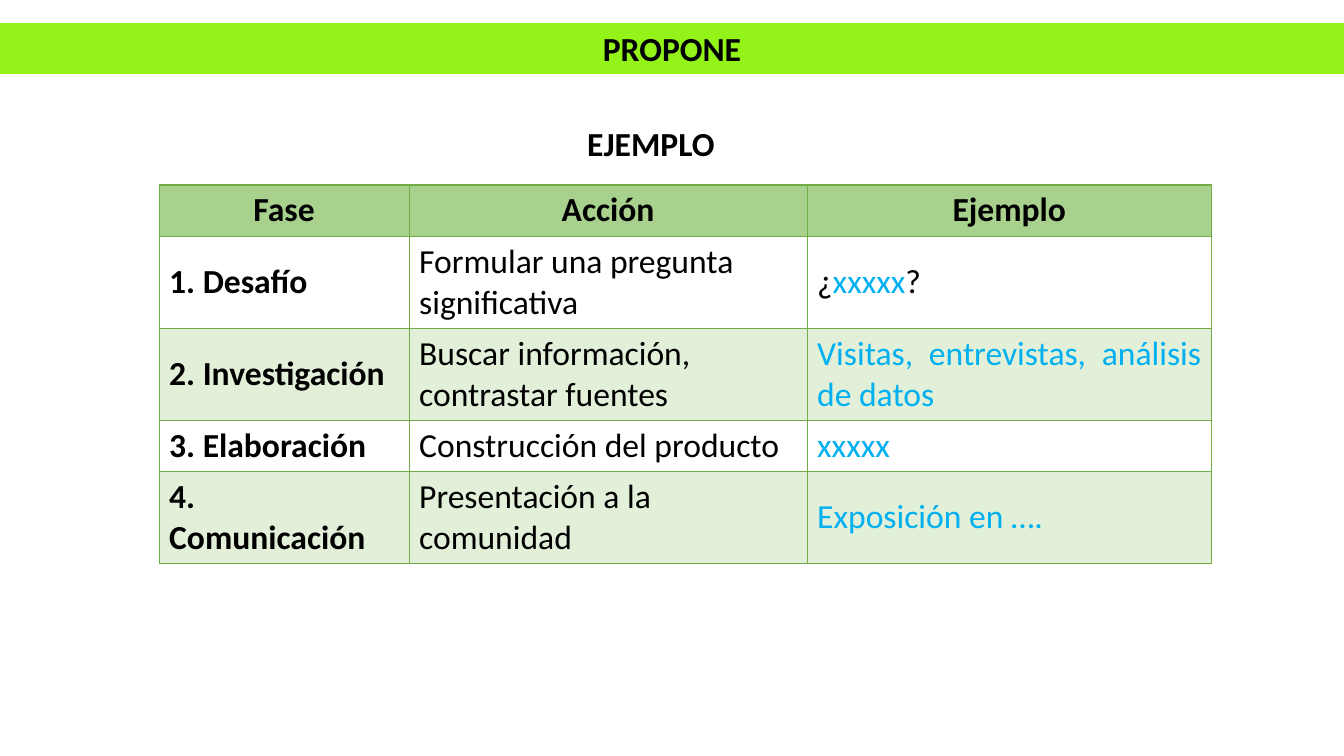
from lxml import etree
from pptx import Presentation
from pptx.dml.color import RGBColor
from pptx.enum import text
from pptx.oxml import ns
from pptx.util import Cm, Pt

# Content
TITLE = "PROPONE"
SUBTITLE = "EJEMPLO"
HEADERS = ("Fase", "Acción", "Ejemplo")
# Each example is a tuple of (wording, colour) pieces
PHASES = [
    ("1. Desafío", "Formular una pregunta significativa",
     (("¿", "black"), ("xxxxx", "blue"), ("?", "black"))),
    ("2. Investigación", "Buscar información, contrastar fuentes",
     (("Visitas, entrevistas, análisis de datos", "blue"),)),
    ("3. Elaboración", "Construcción del producto", (("xxxxx", "blue"),)),
    ("4. Comunicación", "Presentación a la comunidad",
     (("Exposición en ….", "blue"),)),
]
COLORS = {"black": "000000", "blue": "00B0F0", "lime": "94F319",
          "header": "A9D18E", "band": "E2F0D9", "border": "70AD47"}

# Layout
SLIDE_W, SLIDE_H = Cm(33.87), Cm(19.05)
COLUMN_WIDTHS = (Cm(6.3), Cm(10.03), Cm(10.19))
ONE_LINE, TWO_LINES = Cm(1.29), Cm(2.32)
ROW_HEIGHTS = (ONE_LINE, TWO_LINES, TWO_LINES, ONE_LINE, TWO_LINES)
ALIGN = text.PP_ALIGN


def rgb(name):
    return RGBColor.from_string(COLORS[name])


def write(paragraph, pieces, align, bold):
    paragraph.alignment = align
    for wording, color in pieces:
        run = paragraph.add_run()
        run.text = wording
        run.font.name = "Calibri"
        run.font.size = Pt(24)
        run.font.bold = bold
        run.font.color.rgb = rgb(color)


def add_borders(cell):
    properties = cell._tc.get_or_add_tcPr()
    for side in ("a:lnL", "a:lnR", "a:lnT", "a:lnB"):
        line = etree.SubElement(properties, ns.qn(side), w=str(Pt(1)))
        fill = etree.SubElement(line, ns.qn("a:solidFill"))
        etree.SubElement(fill, ns.qn("a:srgbClr"), val=COLORS["border"])


def fill_cell(cell, pieces, align, bold, color):
    add_borders(cell)
    if color:
        cell.fill.solid()
        cell.fill.fore_color.rgb = rgb(color)
    else:
        cell.fill.background()
    cell.vertical_anchor = text.MSO_ANCHOR.MIDDLE
    write(cell.text_frame.paragraphs[0], pieces, align, bold)


def main():
    prs = Presentation()
    prs.slide_width, prs.slide_height = SLIDE_W, SLIDE_H
    slide = prs.slides.add_slide(prs.slide_layouts[5])

    # Title band
    title = slide.shapes.title
    title.left, title.top, title.width, title.height = 0, Cm(0.58), SLIDE_W, Cm(1.28)
    title.fill.solid()
    title.fill.fore_color.rgb = rgb("lime")
    title.text_frame.auto_size = text.MSO_AUTO_SIZE.NONE
    title.text_frame.vertical_anchor = text.MSO_ANCHOR.MIDDLE
    write(title.text_frame.paragraphs[0], [(TITLE, "black")], ALIGN.CENTER, True)

    # Subtitle
    subtitle = slide.shapes.add_textbox(Cm(14.55), Cm(2.98), Cm(3.76), Cm(1.28))
    subtitle.text_frame.word_wrap = False
    write(subtitle.text_frame.paragraphs[0], [(SUBTITLE, "black")], ALIGN.LEFT, True)

    # Table of phases
    table = slide.shapes.add_table(
        len(ROW_HEIGHTS), len(COLUMN_WIDTHS), Cm(4.01), Cm(4.66),
        sum(COLUMN_WIDTHS), sum(ROW_HEIGHTS)).table
    table.first_row = table.horz_banding = False
    for column, width in zip(table.columns, COLUMN_WIDTHS):
        column.width = width
    for row, height in zip(table.rows, ROW_HEIGHTS):
        row.height = height

    for c, header in enumerate(HEADERS):
        fill_cell(table.cell(0, c), [(header, "black")], ALIGN.CENTER, True, "header")
    for r, (phase, action, example) in enumerate(PHASES, start=1):
        band = "band" if r % 2 == 0 else None
        fill_cell(table.cell(r, 0), [(phase, "black")], ALIGN.LEFT, True, band)
        fill_cell(table.cell(r, 1), [(action, "black")], ALIGN.LEFT, False, band)
        fill_cell(table.cell(r, 2), example, ALIGN.JUSTIFY, False, band)

    prs.save("out.pptx")


if __name__ == "__main__":
    main()
